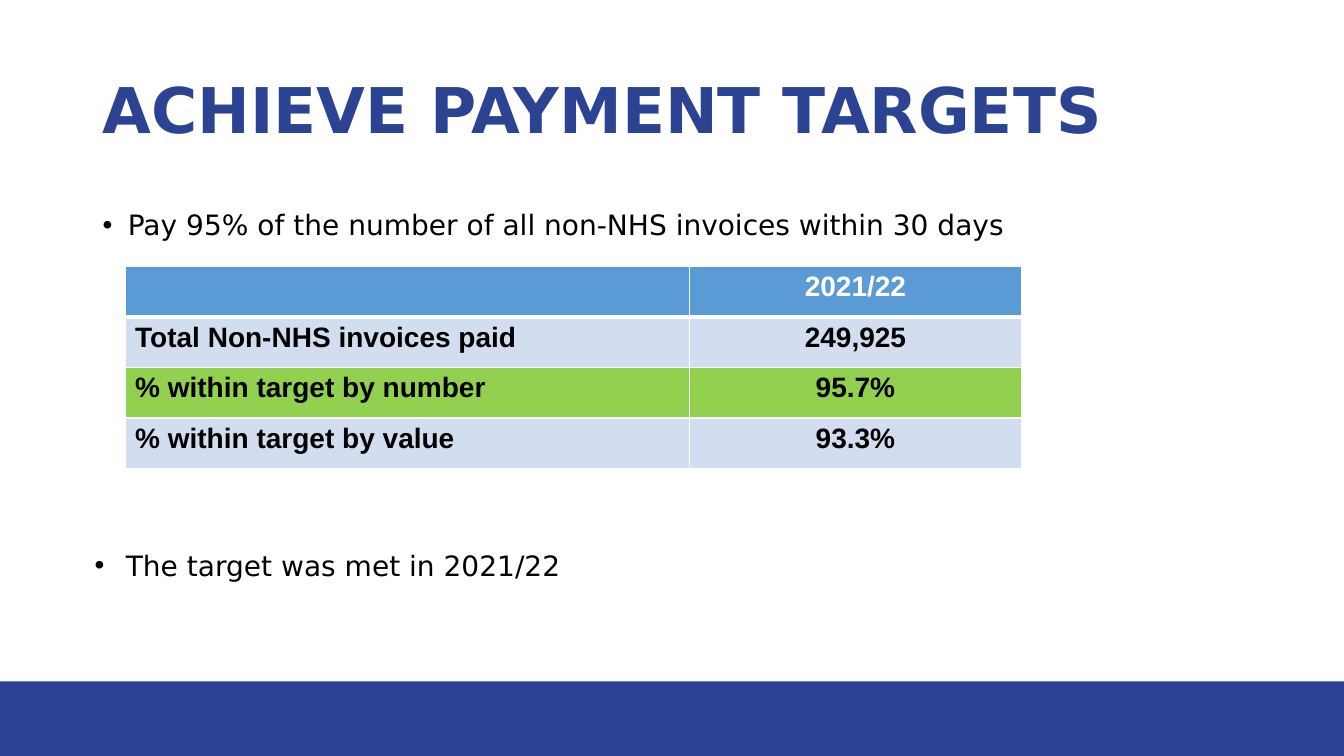
from dataclasses import dataclass

from lxml.etree import SubElement
from pptx import Presentation
from pptx.dml.color import RGBColor
from pptx.enum.shapes import MSO_SHAPE
from pptx.enum.text import MSO_ANCHOR, PP_ALIGN
from pptx.oxml.ns import qn
from pptx.util import Inches, Pt


@dataclass(frozen=True)
class Theme:
    navy: str = "2C4393"
    header: str = "5B9BD5"
    row: str = "D2DEEF"
    highlight: str = "92D050"
    white: str = "FFFFFF"
    black: str = "000000"
    text_font: str = "DejaVu Sans"
    table_font: str = "Arial"
    title_size: int = 45
    text_size: int = 20


THEME = Theme()
PAYMENT_ROWS = [
    ("", "2021/22", THEME.header),
    ("Total Non-NHS invoices paid", "249,925", THEME.row),
    ("% within target by number", "95.7%", THEME.highlight),
    ("% within target by value", "93.3%", THEME.row),
]


def style_font(para, name, size, color, bold=False):
    font = para.font
    font.name = name
    font.size = Pt(size)
    font.bold = bold
    font.color.rgb = RGBColor.from_string(color)


def add_footer_band(page):
    band = page.shapes.add_shape(
        MSO_SHAPE.RECTANGLE, 0, Inches(6.76), Inches(13.33), Inches(0.74))
    band.shadow.inherit = False
    band.fill.solid()
    band.fill.fore_color.rgb = RGBColor.from_string(THEME.navy)
    band.line.fill.background()


def set_title(page, text):
    title = page.shapes.title
    title.left, title.top = Inches(0.92), Inches(0.4)
    title.width, title.height = Inches(11.5), Inches(1.45)
    frame = title.text_frame
    frame.text = text
    frame.vertical_anchor = MSO_ANCHOR.MIDDLE
    para = frame.paragraphs[0]
    para.alignment = PP_ALIGN.LEFT
    para.line_spacing = 0.9
    style_font(para, THEME.text_font, THEME.title_size, THEME.navy, bold=True)


def add_bullet(page, text, left, top, width, height, indent,
               alignment=PP_ALIGN.LEFT, line_spacing=1.0):
    box = page.shapes.add_textbox(
        Inches(left), Inches(top), Inches(width), Inches(height))
    box.text_frame.word_wrap = True
    para = box.text_frame.paragraphs[0]
    para.text = text
    para.alignment = alignment
    para.line_spacing = line_spacing
    properties = para._p.get_or_add_pPr()
    properties.set("marL", str(Inches(indent)))
    properties.set("indent", str(-Inches(indent)))
    SubElement(properties, qn("a:buFont"), typeface=THEME.table_font)
    SubElement(properties, qn("a:buChar"), char="•")
    style_font(para, THEME.text_font, THEME.text_size, THEME.black)


def add_border(cell, side, points):
    """Draw a white line on one side: L, R, T or B, called in that order."""
    line = SubElement(cell._tc.get_or_add_tcPr(), qn(f"a:ln{side}"),
                      w=str(Pt(points)))
    fill = SubElement(line, qn("a:solidFill"))
    SubElement(fill, qn("a:srgbClr"), val=THEME.white)


def fill_cell(cell, text, row, column, color):
    for side in "LRTB":
        under_header = (row, side) in ((0, "B"), (1, "T"))
        add_border(cell, side, 3 if under_header else 1)
    cell.fill.solid()
    cell.fill.fore_color.rgb = RGBColor.from_string(color)
    cell.text = text
    para = cell.text_frame.paragraphs[0]
    para.alignment = PP_ALIGN.CENTER if column else PP_ALIGN.LEFT
    style_font(para, THEME.table_font, THEME.text_size,
               THEME.black if row else THEME.white, bold=True)


def add_payment_table(page):
    table = page.shapes.add_table(
        len(PAYMENT_ROWS), 2,
        Inches(1.24), Inches(2.64), Inches(8.89), Inches(2.01)).table
    table.horz_banding = False
    table.columns[0].width = Inches(5.6)
    table.columns[1].width = Inches(3.29)
    for row, (label, value, color) in enumerate(PAYMENT_ROWS):
        for column, text in enumerate((label, value)):
            fill_cell(table.cell(row, column), text, row, column, color)


def main():
    deck = Presentation()
    deck.slide_width, deck.slide_height = Inches(13.33), Inches(7.5)
    page = deck.slides.add_slide(deck.slide_layouts[5])
    add_footer_band(page)
    set_title(page, "ACHIEVE PAYMENT TARGETS")
    add_bullet(page,
               "Pay 95% of the number of all non-NHS invoices within 30 days",
               0.92, 2.05, 11.5, 4.22, indent=0.25, line_spacing=0.9)
    add_payment_table(page)
    add_bullet(page, "The target was met in 2021/22",
               0.84, 5.39, 10.87, 0.44, indent=0.31,
               alignment=PP_ALIGN.JUSTIFY)
    deck.save("out.pptx")


if __name__ == "__main__":
    main()
